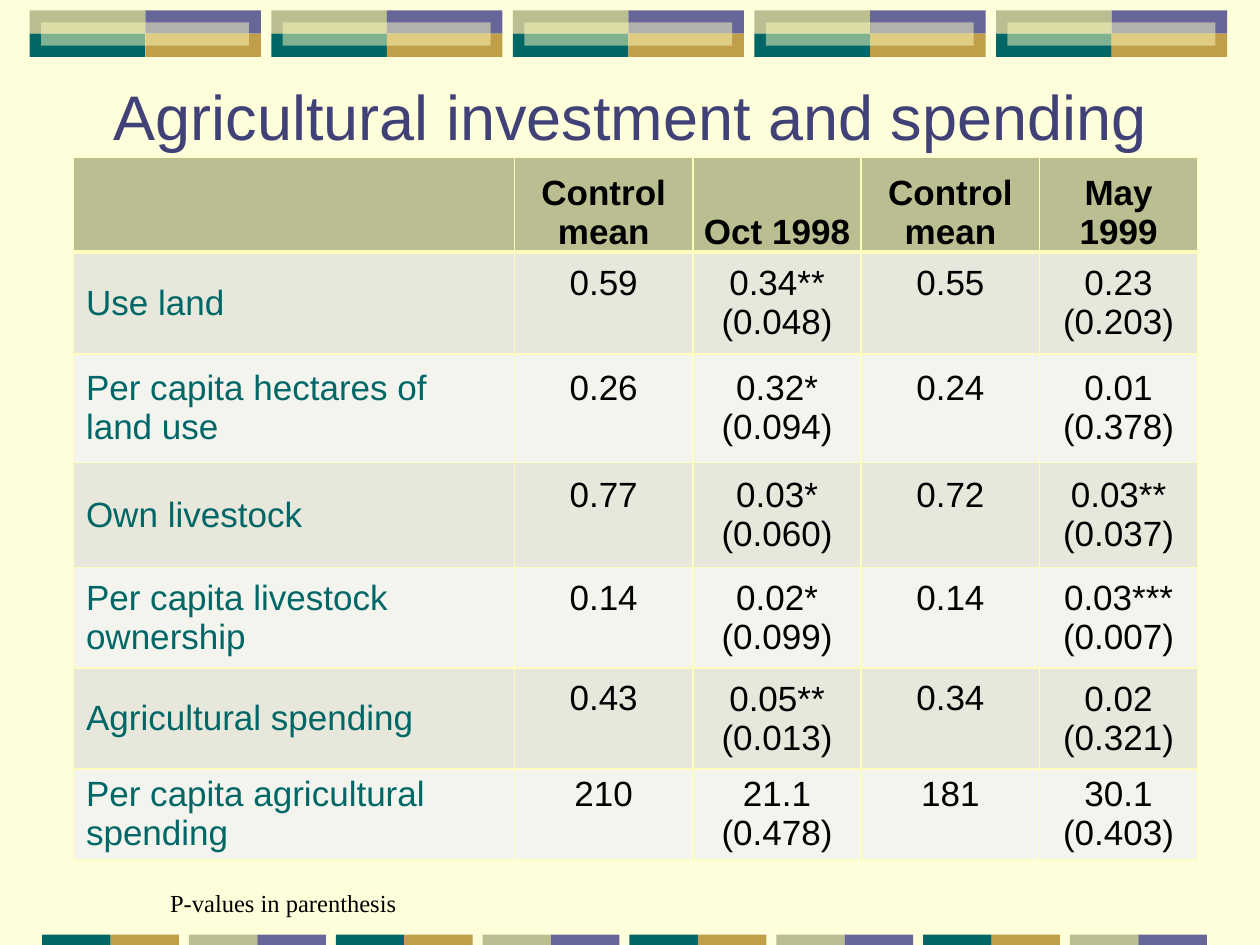
"""Build the slide on agricultural investment and spending."""
import pptx
import pptx.util
import pptx.dml.color
import pptx.enum.shapes
import pptx.enum.text
import pptx.oxml
import pptx.oxml.ns
from pptx.util import Cm, Pt

TITLE = "Agricultural investment and spending"
NOTE = "P-values in parenthesis"
HEADER = ["", "Control mean", "Oct 1998", "Control mean", "May 1999"]
ROWS = [
    ("Use land", "0.59", ("0.34**", "(0.048)"), "0.55", ("0.23", "(0.203)")),
    ("Per capita hectares of land use", "0.26", ("0.32*", "(0.094)"), "0.24", ("0.01", "(0.378)")),
    ("Own livestock", "0.77", ("0.03*", "(0.060)"), "0.72", ("0.03**", "(0.037)")),
    ("Per capita livestock ownership", "0.14", ("0.02*", "(0.099)"), "0.14", ("0.03***", "(0.007)")),
    ("Agricultural spending", "0.43", ("0.05**", "(0.013)"), "0.34", ("0.02", "(0.321)")),
    ("Per capita agricultural spending", "210", ("21.1", "(0.478)"), "181", ("30.1", "(0.403)")),
]
COLUMN_WIDTHS = [8.89, 3.6, 3.39, 3.6, 3.18]
ROW_HEIGHTS = [1.9, 2.06, 2.18, 2.12, 2.03, 2.03, 1.83]
VALUE_LINE = 0.8

THEME = {
    "background": "FFFEDB", "title": "404176", "text": "000000", "label": "006666",
    "olive": "BABE90", "violet": "666699", "teal": "006666", "gold": "C09E4A",
    "pale": "FFFDBD", "bands": ("E7E8DB", "F3F4EE"),
    "font": "Arial", "note_font": "Times New Roman",
    "title_size": 36, "table_size": 20, "note_size": 14,
}
ALIGN = pptx.enum.text.PP_ALIGN
ANCHOR = pptx.enum.text.MSO_ANCHOR


def rgb(value):
    return pptx.dml.color.RGBColor.from_string(value)


def add_run(paragraph, text, size, color, font=THEME["font"], bold=False):
    run = paragraph.add_run()
    run.text = text
    run.font.name = font
    run.font.size = Pt(size)
    run.font.bold = bold
    run.font.color.rgb = rgb(color)


def add_tile(slide, left, top, width, height, color, opacity=None):
    tile = slide.shapes.add_shape(
        pptx.enum.shapes.MSO_SHAPE.RECTANGLE, Cm(left), Cm(top), Cm(width), Cm(height))
    tile.shadow.inherit = False
    tile.line.fill.background()
    tile.fill.solid()
    tile.fill.fore_color.rgb = rgb(THEME[color])
    if opacity:
        fill_color = tile.fill._xPr.find(".//" + pptx.oxml.ns.qn("a:srgbClr"))
        fill_color.append(pptx.oxml.parse_xml(
            f'<a:alpha {pptx.oxml.ns.nsdecls("a")} val="{opacity * 1000}"/>'))


def add_top_band(slide):
    width, height, pitch = 2.33, 0.47, 4.87
    quarters = [("olive", "violet"), ("teal", "gold")]
    for block in range(5):
        left = 0.6 + block * pitch
        for row, colors in enumerate(quarters):
            for column, color in enumerate(colors):
                add_tile(slide, left + column * width, 0.21 + row * height, width, height, color)
        add_tile(slide, left + 0.23, 0.45, 4.19, height, "pale", opacity=50)


def add_bottom_band(slide):
    width, pitch = 1.38, 2.96
    pairs = [("teal", "gold"), ("olive", "violet")]
    for block in range(8):
        for column, color in enumerate(pairs[block % 2]):
            add_tile(slide, 0.85 + block * pitch + column * width, 18.84, width, 0.21, color)


def set_borders(cell, top, bottom):
    properties = cell._tc.get_or_add_tcPr()
    widths = {"lnL": 1, "lnR": 1, "lnT": top, "lnB": bottom}
    for index, (side, points) in enumerate(widths.items()):
        properties.insert(index, pptx.oxml.parse_xml(
            f'<a:{side} {pptx.oxml.ns.nsdecls("a")} w="{Pt(points)}"><a:solidFill>'
            f'<a:srgbClr val="{THEME["pale"]}"/></a:solidFill></a:{side}>'))


def fill_cell(cell, content, row, column):
    is_header, is_label = row == 0, column == 0
    cell.fill.solid()
    cell.fill.fore_color.rgb = rgb(THEME["olive"] if is_header else THEME["bands"][(row - 1) % 2])
    set_borders(cell, 3 if row == 1 else 1, 3 if is_header else 1)
    cell.vertical_anchor = ANCHOR.BOTTOM if is_header else ANCHOR.MIDDLE
    if not is_label:
        cell.margin_left = cell.margin_right = Cm(0.18)
        cell.margin_top = 0
        single_value = not is_header and isinstance(content, str)
        cell.margin_bottom = Cm(VALUE_LINE if single_value else 0)
    lines = [content] if isinstance(content, str) else content
    for index, line in enumerate(lines):
        frame = cell.text_frame
        paragraph = frame.add_paragraph() if index else frame.paragraphs[0]
        paragraph.alignment = ALIGN.LEFT if is_label else ALIGN.CENTER
        if line:
            color = THEME["label" if is_label else "text"]
            add_run(paragraph, line, THEME["table_size"], color, bold=is_header)


def add_results_table(slide):
    contents = [HEADER, *ROWS]
    table = slide.shapes.add_table(
        len(contents), len(HEADER), Cm(1.48), Cm(3.18),
        Cm(sum(COLUMN_WIDTHS)), Cm(sum(ROW_HEIGHTS))).table
    table.horz_banding = False
    for column, width in zip(table.columns, COLUMN_WIDTHS):
        column.width = Cm(width)
    for row, height in zip(table.rows, ROW_HEIGHTS):
        row.height = Cm(height)
    for row, values in enumerate(contents):
        for column, content in enumerate(values):
            fill_cell(table.cell(row, column), content, row, column)


def set_title(slide):
    title = slide.shapes.title
    title.left, title.top, title.width, title.height = Cm(0.64), Cm(1.27), Cm(24.13), Cm(2.12)
    frame = title.text_frame
    frame.auto_size = pptx.enum.text.MSO_AUTO_SIZE.NONE
    frame.vertical_anchor = ANCHOR.MIDDLE
    frame.paragraphs[0].alignment = ALIGN.CENTER
    add_run(frame.paragraphs[0], TITLE, THEME["title_size"], THEME["title"])


def add_note(slide):
    frame = slide.shapes.add_textbox(Cm(3.18), Cm(17.78), Cm(6.15), Cm(0.86)).text_frame
    frame.word_wrap = True
    add_run(frame.paragraphs[0], NOTE, THEME["note_size"], THEME["text"], THEME["note_font"])


def main():
    presentation = pptx.Presentation()
    presentation.slide_width, presentation.slide_height = Cm(25.4), Cm(19.05)
    slide = presentation.slides.add_slide(presentation.slide_layouts[5])
    slide.background.fill.solid()
    slide.background.fill.fore_color.rgb = rgb(THEME["background"])
    add_top_band(slide)
    add_bottom_band(slide)
    set_title(slide)
    add_results_table(slide)
    add_note(slide)
    presentation.save("out.pptx")


if __name__ == "__main__":
    main()
